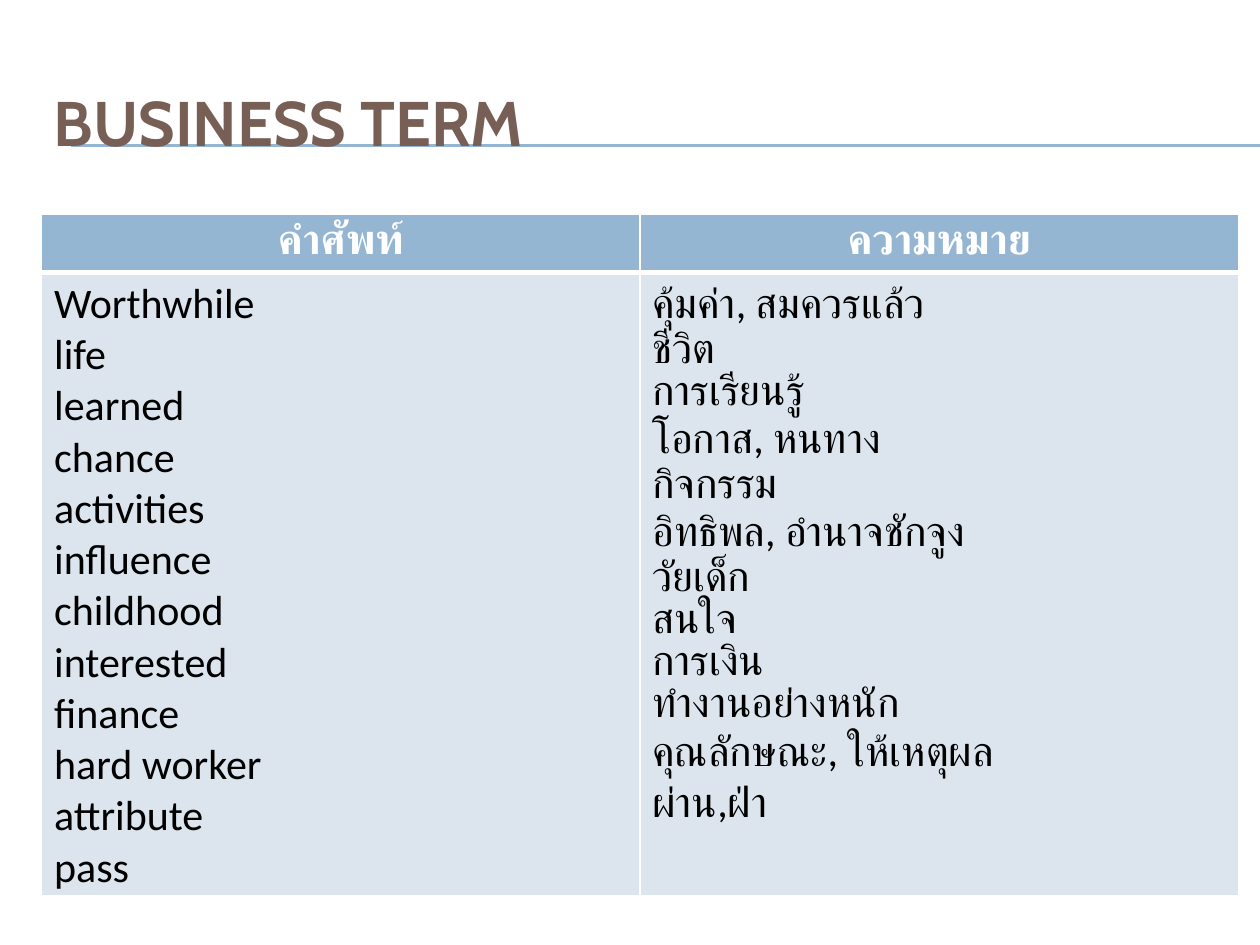
from dataclasses import dataclass

from lxml import etree
from pptx import Presentation
from pptx.dml.color import RGBColor
from pptx.enum.shapes import MSO_CONNECTOR
from pptx.enum.text import MSO_ANCHOR, PP_ALIGN
from pptx.oxml.ns import qn
from pptx.util import Inches, Pt

STRAIGHT = MSO_CONNECTOR.STRAIGHT
MIDDLE, TOP = MSO_ANCHOR.MIDDLE, MSO_ANCHOR.TOP
LEFT, CENTER = PP_ALIGN.LEFT, PP_ALIGN.CENTER


@dataclass(frozen=True)
class Theme:
    accent: str = "94B6D2"
    title: str = "775F55"
    body_fill: str = "DCE5EE"
    ink: str = "000000"
    paper: str = "FFFFFF"
    title_font: str = "Cabin"
    table_font: str = "Calibri"
    title_size: float = 36
    table_size: float = 24
    rule_width: float = 0.75
    grid_width: float = 1
    header_width: float = 3


@dataclass(frozen=True)
class Box:
    left: float
    top: float
    width: float
    height: float

    def emu(self):
        return [Inches(side) for side in (self.left, self.top, self.width, self.height)]


THEME = Theme()
PAGE_WIDTH, PAGE_HEIGHT = 10, 7.5
MARGIN, CONTENT_WIDTH = 0.33, 9.5
HEADINGS = ("คำศัพท์", "ความหมาย")
TERMS = (
    ("Worthwhile", "คุ้มค่า, สมควรแล้ว"),
    ("life", "ชีวิต"),
    ("learned", "การเรียนรู้"),
    ("chance", "โอกาส, หนทาง"),
    ("activities", "กิจกรรม"),
    ("influence", "อิทธิพล, อำนาจชักจูง"),
    ("childhood", "วัยเด็ก"),
    ("interested", "สนใจ"),
    ("finance", "การเงิน"),
    ("hard worker", "ทำงานอย่างหนัก"),
    ("attribute", "คุณลักษณะ, ให้เหตุผล"),
    ("pass", "ผ่าน,ฝ่า"),
)


def set_values(target, values):
    for name, value in values.items():
        setattr(target, name, value)


def write_lines(frame, lines, font, color, paragraph):
    for index, line in enumerate(lines):
        para = frame.add_paragraph() if index else frame.paragraphs[0]
        set_values(para, paragraph)
        span = para.add_run()
        span.text = line
        set_values(span.font, font)
        span.font.color.rgb = RGBColor.from_string(color)


def set_borders(cell, widths):
    properties = cell._tc.get_or_add_tcPr()
    for index, (side, width) in enumerate(widths.items()):
        border = etree.Element(qn(f"a:{side}"), w=str(Pt(width)))
        fill = etree.SubElement(border, qn("a:solidFill"))
        etree.SubElement(fill, qn("a:srgbClr"), val=THEME.paper)
        properties.insert(index, border)


def add_rules(page, box):
    for top in (box.top, box.top + box.height):
        rule = page.shapes.add_connector(
            STRAIGHT, Inches(box.left), Inches(top),
            Inches(box.left + box.width), Inches(top),
        )
        rule.line.color.rgb = RGBColor.from_string(THEME.accent)
        rule.line.width = Pt(THEME.rule_width)
        etree.SubElement(rule._element.spPr, qn("a:effectLst"))


def add_title(page, box, title):
    frame = page.shapes.add_textbox(*box.emu()).text_frame
    set_values(frame, {"word_wrap": True, "vertical_anchor": MIDDLE})
    font = {"name": THEME.title_font, "size": Pt(THEME.title_size), "bold": True}
    write_lines(frame, [title], font, THEME.title, {"alignment": LEFT})


def add_glossary(page, box, header_height):
    table = page.shapes.add_table(2, len(HEADINGS), *box.emu()).table
    for column in table.columns:
        column.width = Inches(box.width / len(HEADINGS))
    for row, height in zip(table.rows, (header_height, box.height - header_height)):
        row.height = Inches(height)

    thin, thick = THEME.grid_width, THEME.header_width
    header = {
        "fill": THEME.accent, "color": THEME.paper, "bold": True,
        "paragraph": {"alignment": CENTER, "line_spacing": 1.15},
        "cell": {"margin_left": Inches(0.07), "margin_right": Inches(0.07),
                 "margin_top": 0, "margin_bottom": 0, "vertical_anchor": TOP},
        "borders": {"lnL": thin, "lnR": thin, "lnT": thin, "lnB": thick},
    }
    body = {
        "fill": THEME.body_fill, "color": THEME.ink, "bold": False,
        "paragraph": {"alignment": LEFT},
        "cell": {"vertical_anchor": TOP},
        "borders": {"lnL": thin, "lnR": thin, "lnT": thick, "lnB": thin},
    }
    contents = ([[heading] for heading in HEADINGS], zip(*TERMS))
    for row, (style, columns) in enumerate(zip((header, body), contents)):
        for column, lines in enumerate(columns):
            cell = table.cell(row, column)
            set_values(cell, style["cell"])
            cell.fill.solid()
            cell.fill.fore_color.rgb = RGBColor.from_string(style["fill"])
            set_borders(cell, style["borders"])
            font = {"name": THEME.table_font, "size": Pt(THEME.table_size),
                    "bold": style["bold"]}
            write_lines(cell.text_frame, lines, font, style["color"], style["paragraph"])


def main():
    deck = Presentation()
    set_values(deck, {"slide_width": Inches(PAGE_WIDTH), "slide_height": Inches(PAGE_HEIGHT)})
    page = deck.slides.add_slide(deck.slide_layouts[6])
    add_rules(page, Box(0.56, 1.15, PAGE_WIDTH - 0.56, 0.01))
    add_title(page, Box(MARGIN, 0.5, CONTENT_WIDTH, 0.92), "BUSINESS TERM")
    add_glossary(page, Box(MARGIN, 1.7, CONTENT_WIDTH, 5.36), 0.41)
    deck.save("out.pptx")


if __name__ == "__main__":
    main()
